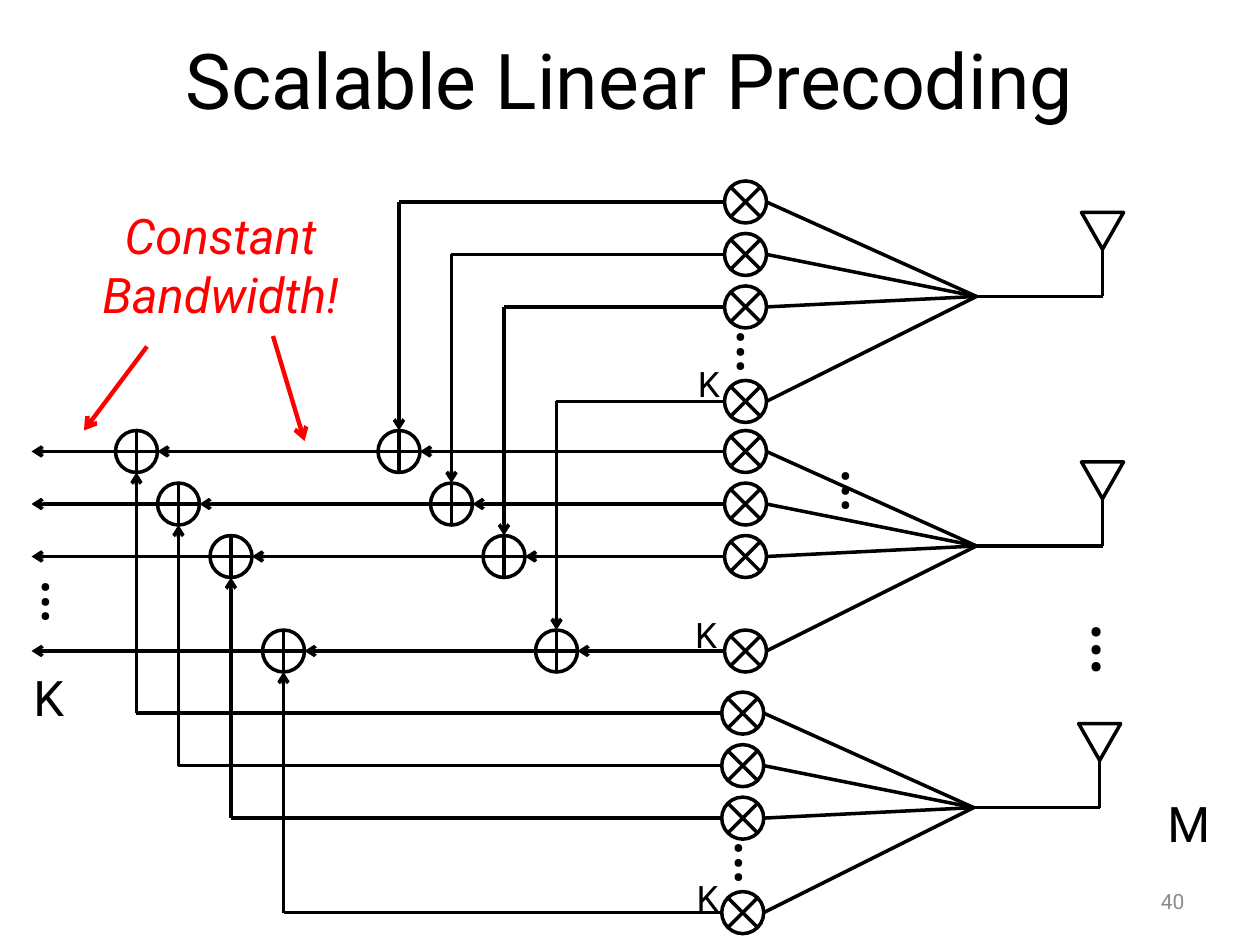
"""Build the slide on scalable linear precoding with its signal-flow diagram."""
from pptx import Presentation
from pptx.dml.color import RGBColor
from pptx.enum.shapes import MSO_CONNECTOR, MSO_SHAPE
from pptx.enum.text import MSO_ANCHOR, PP_ALIGN
from pptx.oxml.ns import qn
from pptx.util import Pt
from lxml.etree import SubElement

COLORS = {"ink": "000000", "accent": "FF0000", "number": "8C8C8C"}
ROW_OFFSETS = [0, 30, 60, 114]
SUM_ROWS = [258 + offset for offset in ROW_OFFSETS]
LEFT_SUMS = [78, 102, 132, 162]
RIGHT_SUMS = [228, 258, 288, 318]
RADIUS = 12
OUTPUT_X = 18

deck = Presentation()
deck.slide_width, deck.slide_height = Pt(720), Pt(540)
page = deck.slides.add_slide(deck.slide_layouts[5])


def add_line(start, end, arrow=False, color="ink", width=2):
    """Draw a straight line, with an arrowhead at its end if wanted."""
    line = page.shapes.add_connector(
        MSO_CONNECTOR.STRAIGHT, *[Pt(value) for value in (*start, *end)])
    line.line.color.rgb = RGBColor.from_string(COLORS[color])
    line.line.width = Pt(width)
    properties = line._element.spPr
    if arrow:
        SubElement(properties.find(qn("a:ln")), qn("a:tailEnd"), type="arrow")
    SubElement(properties, qn("a:effectLst"))


def add_symbol(kind, left, top, width, height):
    """Draw an unfilled diagram symbol."""
    symbol = page.shapes.add_shape(kind, Pt(left), Pt(top), Pt(width), Pt(height))
    symbol.shadow.inherit = False
    symbol.fill.background()
    symbol.line.color.rgb = RGBColor.from_string(COLORS["ink"])
    symbol.line.width = Pt(2)
    return symbol


antennas = [(414, 115.4, RIGHT_SUMS), (414, 258, None), (412.4, 407.5, LEFT_SUMS)]
for left, first_row, columns in antennas:
    hub_x, hub_y = left + 144, first_row + 54
    mast_x = hub_x + 72
    for index, offset in enumerate(ROW_OFFSETS):
        y = first_row + offset
        add_symbol(MSO_SHAPE.FLOWCHART_SUMMING_JUNCTION, left, y - RADIUS, 24, 24)
        add_line((left + 24, y), (hub_x, hub_y))
        if columns:
            x = columns[index]
            side = -RADIUS if y < SUM_ROWS[index] else RADIUS
            add_line((x, y), (left, y))
            add_line((x, y), (x, SUM_ROWS[index] + side), arrow=True)
    add_line((hub_x, hub_y), (mast_x, hub_y))
    add_line((mast_x, hub_y - 27), (mast_x, hub_y))
    antenna = add_symbol(MSO_SHAPE.FLOWCHART_MERGE, mast_x - 12, hub_y - 48, 24, 21)

for y, left_x, right_x in zip(SUM_ROWS, LEFT_SUMS, RIGHT_SUMS):
    for x in (left_x, right_x):
        add_symbol(MSO_SHAPE.FLOWCHART_OR, x - RADIUS, y - RADIUS, 24, 24)
    add_line((414, y), (right_x + RADIUS, y), arrow=True)
    add_line((right_x - RADIUS, y), (left_x + RADIUS, y), arrow=True)
    add_line((left_x - RADIUS, y), (OUTPUT_X, y), arrow=True)

add_line((156, 192), (174, 252), arrow=True, color="accent", width=2.5)
add_line((84, 198), (48, 246), arrow=True, color="accent", width=2.5)

page.shapes.title.text = "Scalable Linear Precoding"
texts = [(page.shapes.title, (36, 0, 648, 90), 0, 44, "ink", PP_ALIGN.CENTER)]
labels = [
    ("40", (516.2, 500.4, 167.8, 28.8), 0, 12, "number", PP_ALIGN.RIGHT),
    ("Constant\nBandwidth!", (36, 114, 180, 75), 0, 28, "accent", PP_ALIGN.CENTER),
    ("M", (660, 450, 48, 41), 0, 28, "ink", PP_ALIGN.LEFT),
    ("K", (12, 378, 48, 41), 0, 28, "ink", PP_ALIGN.LEFT),
]
for left, top in [(391.7, 203.8), (390.2, 347), (391, 497.5)]:
    labels.append(("K", (left, top, 48, 31.5), 0, 20, "ink", PP_ALIGN.LEFT))
for left, top in [(404, 185.8), (464.4, 265.3), (7.2, 329), (403.2, 478)]:
    labels.append(("…", (left, top, 66, 55.5), 90, 40, "ink", PP_ALIGN.LEFT))
labels.append(("…", (609.8, 348.5, 66, 65.5), 90, 48, "ink", PP_ALIGN.LEFT))
for wording, area, *style in labels:
    box = page.shapes.add_textbox(*[Pt(value) for value in area])
    box.text_frame.text = wording
    texts.append((box, area, *style))

for box, area, angle, size, color, align in texts:
    frame = box.text_frame
    for name, value in zip(("left", "top", "width", "height"), area):
        setattr(box, name, Pt(value))
    box.rotation = angle
    frame.word_wrap = True
    centred = color == "number" or size == 44
    frame.vertical_anchor = MSO_ANCHOR.MIDDLE if centred else MSO_ANCHOR.TOP
    font_format = {"name": "Roboto", "size": Pt(size), "italic": color == "accent"}
    for para in frame.paragraphs:
        para.alignment = align
        for span in para.runs:
            for name, value in font_format.items():
                setattr(span.font, name, value)
            span.font.color.rgb = RGBColor.from_string(COLORS[color])

deck.save("out.pptx")
